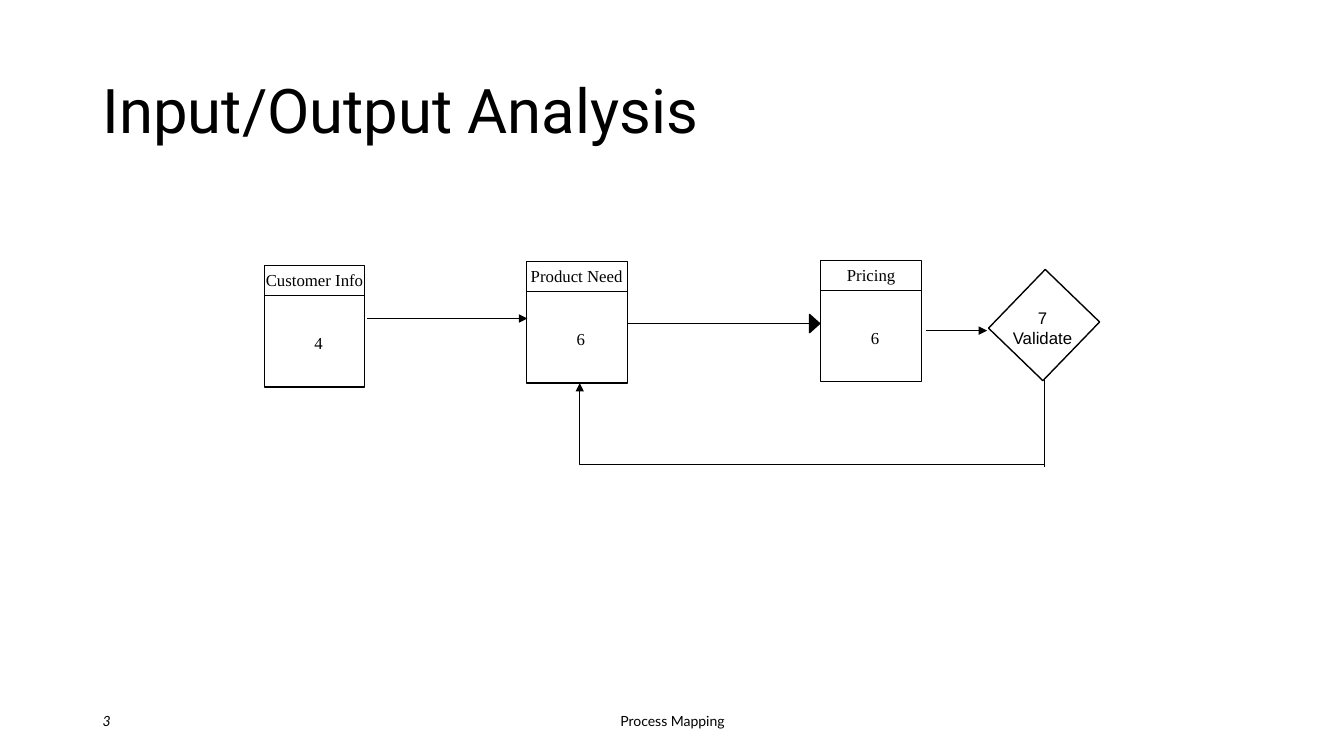
import pptx
import pptx.util
import pptx.dml.color
import pptx.enum.shapes
import pptx.enum.text
import pptx.oxml
import pptx.oxml.ns

Inches, Pt = pptx.util.Inches, pptx.util.Pt
SHAPE = pptx.enum.shapes.MSO_SHAPE
CONNECTOR = pptx.enum.shapes.MSO_CONNECTOR
ALIGN = pptx.enum.text.PP_ALIGN
ANCHOR = pptx.enum.text.MSO_ANCHOR
COLORS = {name: pptx.dml.color.RGBColor.from_string(value)
          for name, value in {"ink": "000000", "paper": "FFFFFF"}.items()}
SERIF = "Times New Roman"

prs = pptx.Presentation()
prs.slide_width, prs.slide_height = Inches(13.33), Inches(7.5)
s = prs.slides.add_slide(prs.slide_layouts[6])


def write(sp, text, font=SERIF, size=12, align=ALIGN.LEFT, anchor=ANCHOR.TOP,
          wrap=False, italic=False, spacing=None):
    tf = sp.text_frame
    tf.word_wrap = wrap
    tf.vertical_anchor = anchor
    for i, line in enumerate(text.split("\n")):
        p = tf.add_paragraph() if i else tf.paragraphs[0]
        p.alignment = align
        p.line_spacing = spacing
        r = p.add_run()
        r.text = line
        r.font.name, r.font.size, r.font.italic = font, Pt(size), italic
        r.font.color.rgb = COLORS["ink"]


def connect(kind, x1, y1, x2, y2, arrow=None):
    c = s.shapes.add_connector(kind, *map(Inches, (x1, y1, x2, y2)))
    c.line.color.rgb = COLORS["ink"]
    c.line.width = Pt(1)
    if arrow:
        end = pptx.oxml.ns.qn(f"a:{arrow}")
        c.line._get_or_add_ln().append(
            c._element.makeelement(end, {"type": "triangle"}))
    c._element.spPr.append(
        c._element.makeelement(pptx.oxml.ns.qn("a:effectLst"), {}))
    return c


# Title and footer
margin, footer_top, footer_height = 0.92, 6.95, 0.4
for box, text, style in [
    ((margin, footer_top, 3, footer_height), "3",
     dict(font="Lato", size=10, italic=True)),
    ((4.42, footer_top, 4.5, footer_height), "Process Mapping",
     dict(font="Lato", size=10, align=ALIGN.CENTER)),
    ((margin, 0.4, 11.5, 1.45), "Input/Output Analysis",
     dict(font="Roboto", size=44, spacing=0.9)),
]:
    sp = s.shapes.add_textbox(*map(Inches, box))
    write(sp, text, anchor=ANCHOR.MIDDLE, wrap=True, **style)

# Arrows between the steps
connect(CONNECTOR.STRAIGHT, 3.64, 3.16, 5.23, 3.16, "tailEnd")
connect(CONNECTOR.STRAIGHT, 6.23, 3.21, 8.03, 3.21)
connect(CONNECTOR.STRAIGHT, 9.18, 3.28, 9.79, 3.28, "tailEnd")

# Separate arrowhead into Pricing
fb = s.shapes.build_freeform(Inches(8.13), Inches(3.21), scale=1.0)
fb.add_line_segments([(Inches(8.03), Inches(y)) for y in (3.3, 3.12)])
head = fb.convert_to_shape()
head.shadow.inherit = False
head.fill.solid()
head.fill.fore_color.rgb = COLORS["ink"]
head.line.color.rgb = COLORS["ink"]
head.line.width = Pt(1)

# Step boxes: a name band over a body with its count
width, band, body = 1, 0.3, 0.91
for name, count, left, top in [("Customer Info", "4", 2.62, 2.63),
                               ("Product Need", "6", 5.22, 2.59),
                               ("Pricing", "6", 8.14, 2.58)]:
    for y, height, label in [(top, band, name), (top + band, body, "")]:
        sp = s.shapes.add_shape(SHAPE.RECTANGLE, *map(Inches, (left, y, width, height)))
        sp.shadow.inherit = False
        sp.line.color.rgb = COLORS["ink"]
        sp.line.width = Pt(0.75)
        if label:
            sp.fill.solid()
            sp.fill.fore_color.rgb = COLORS["paper"]
            write(sp, label, align=ALIGN.CENTER, anchor=ANCHOR.MIDDLE)
        else:
            sp.fill.background()
    sp = s.shapes.add_textbox(*map(Inches, (left + 0.4, top + 0.62, 0.28, 0.3)))
    write(sp, count)

# Validation decision
sp = s.shapes.add_shape(SHAPE.RECTANGLE, *map(Inches, (9.98, 2.82, 0.75, 0.81)))
sp.rotation = 44
sp.shadow.inherit = False
sp.fill.solid()
sp.fill.fore_color.rgb = COLORS["paper"]
sp.line.color.rgb = COLORS["ink"]
sp.line.width = Pt(1)
sp = s.shapes.add_textbox(*map(Inches, (9.94, 3, 0.8, 0.5)))
write(sp, "7\nValidate", font="Arial", align=ALIGN.CENTER)

# Feedback loop: down from the decision, back up to Product Need
loop = connect(CONNECTOR.ELBOW, 5.75, 3.8, 10.36, 4.61, "headEnd")
guides = loop._element.spPr.find(pptx.oxml.ns.qn("a:prstGeom")).get_or_add_avLst()
guides.append(guides.makeelement(pptx.oxml.ns.qn("a:gd"),
                                 {"name": "adj1", "fmla": "val 0"}))
connect(CONNECTOR.STRAIGHT, 10.36, 3.77, 10.36, 4.63)

prs.save("out.pptx")
